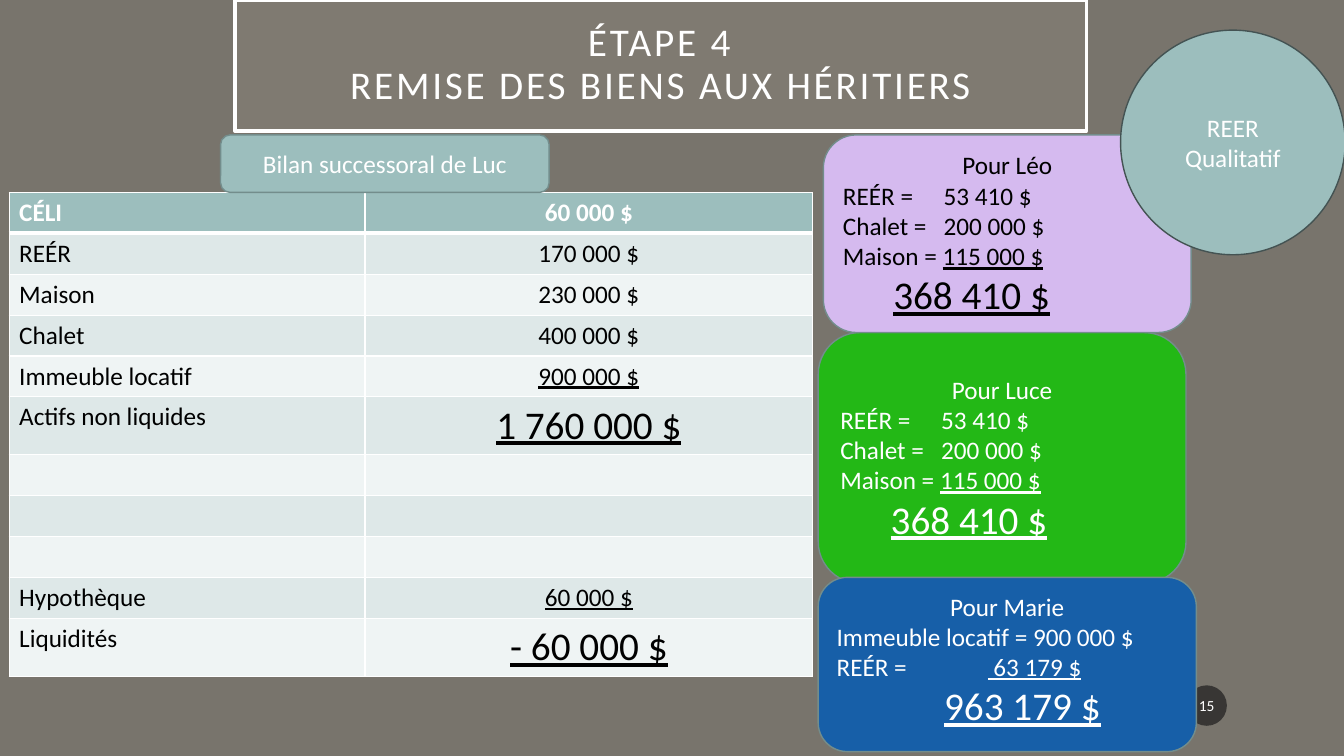
from dataclasses import dataclass

from lxml import etree
from pptx import Presentation
from pptx.dml.color import RGBColor
from pptx.enum.shapes import MSO_SHAPE
from pptx.enum.text import MSO_ANCHOR, PP_ALIGN
from pptx.oxml.ns import qn
from pptx.util import Cm, Pt

RECTANGLE, ROUNDED, OVAL = MSO_SHAPE.RECTANGLE, MSO_SHAPE.ROUNDED_RECTANGLE, MSO_SHAPE.OVAL
TOP, MIDDLE = MSO_ANCHOR.TOP, MSO_ANCHOR.MIDDLE
LEFT, CENTER = PP_ALIGN.LEFT, PP_ALIGN.CENTER


@dataclass(frozen=True)
class Theme:
    font: str = "Calibri"
    background: str = "78746C"
    white: str = "FFFFFF"
    black: str = "000000"
    title_fill: str = "A7A08E"
    number_fill: str = "1D1D1D"
    teal: str = "9CBEBD"
    teal_border: str = "738D8C"
    dark_border: str = "445353"
    bands: tuple = ("EFF4F4", "DEE8E8")
    lilac: str = "D5BAEF"
    green: str = "23B816"
    blue: str = "175FA8"
    body: int = 18
    large: int = 28
    small: int = 11


THEME = Theme()

# Content: positions and sizes in centimetres
TITLE = "ÉTAPE 4\vREMISE DES BIENS AUX HÉRITIERS"
PAGE_NUMBER = "15"
TABLE_HEADING = "Bilan successoral de Luc"
BADGE = "REER\nQualitatif"

# label, amount, underlined, total
BALANCE_SHEET = [
    ("CÉLI", "60 000 $", False, False),
    ("REÉR", "170 000 $", False, False),
    ("Maison", "230 000 $", False, False),
    ("Chalet", "400 000 $", False, False),
    ("Immeuble locatif", "900 000 $", True, False),
    ("Actifs non liquides", "1 760 000 $", True, True),
    ("", "", False, False),
    ("", "", False, False),
    ("", "", False, False),
    ("Hypothèque", "60 000 $", True, False),
    ("Liquidités", "- 60 000 $", True, True),
]
TABLE_LEFT, TABLE_TOP = 0.23, 4.85
COLUMN_WIDTHS = (8.97, 11.28)
ROW_HEIGHT, TOTAL_ROW_HEIGHT = 1.03, 1.46

# plain text, underlined amount, amount size, tab stop
CHILD_SHARE = [
    ("REÉR = \t53 410 $", "", THEME.body, 2.54),
    ("Chalet = \t200 000 $", "", THEME.body, 2.54),
    ("Maison = ", "115 000 $", THEME.body, None),
    ("\t", "368 410 $", THEME.large, 1.27),
]
MARIE_SHARE = [
    ("Immeuble locatif = 900 000 $", "", THEME.body, None),
    ("REÉR = \t", " 63 179 $", THEME.body, 3.81),
    ("\t", "963 179 $", THEME.large, 2.71),
]
# heading, share, box, fill, text colour, anchor
HEIRS = [
    ("Pour Luce", CHILD_SHARE, (20.62, 8.38, 9.27, 6.32), THEME.green, THEME.white, MIDDLE),
    ("Pour Marie", MARIE_SHARE, (20.62, 14.55, 9.53, 4.39), THEME.blue, THEME.white, TOP),
    ("Pour Léo", CHILD_SHARE, (20.75, 3.4, 9.27, 4.98), THEME.lilac, THEME.black, MIDDLE),
]


def rgb(value):
    return RGBColor.from_string(value)


def format_run(run, color, size=THEME.body, bold=False, underline=False):
    font = run.font
    font.name, font.size, font.bold, font.underline = THEME.font, Pt(size), bold, underline
    font.color.rgb = rgb(color)


def add_box(slide, kind, box, fill, line=None, line_width=1, opacity=None):
    shape = slide.shapes.add_shape(kind, *map(Cm, box))
    shape.shadow.inherit = False
    shape.fill.solid()
    shape.fill.fore_color.rgb = rgb(fill)
    if opacity is not None:
        color = shape.fill._xPr.find(".//" + qn("a:srgbClr"))
        etree.SubElement(color, qn("a:alpha"), val=str(opacity * 1000))
    if line:
        shape.line.color.rgb = rgb(line)
        shape.line.width = Pt(line_width)
    else:
        shape.line.fill.background()
    shape.text_frame.word_wrap = True
    shape.text_frame.vertical_anchor = MIDDLE
    return shape


def write_centered(shape, text, size=THEME.body, color=THEME.white):
    shape.text_frame.text = text
    for paragraph in shape.text_frame.paragraphs:
        paragraph.alignment = CENTER
        for run in paragraph.runs:
            format_run(run, color, size)


def set_tab_stop(paragraph, position):
    tabs = etree.SubElement(paragraph._p.get_or_add_pPr(), qn("a:tabLst"))
    etree.SubElement(tabs, qn("a:tab"), pos=str(Cm(position)), algn="l")


def add_title(slide):
    shape = add_box(slide, RECTANGLE, (5.92, 0, 21.46, 3.3), THEME.title_fill,
                    THEME.white, 2.5, opacity=15)
    frame = shape.text_frame
    frame.margin_left = frame.margin_right = frame.margin_top = frame.margin_bottom = Cm(0.5)
    write_centered(shape, TITLE, THEME.large)
    frame.paragraphs[0].line_spacing = 0.9
    for run in frame.paragraphs[0].runs:
        run.font._element.set("spc", "200")


def add_page_number(slide):
    shape = add_box(slide, OVAL, (29.9, 17.27, 1.02, 1.02), THEME.number_fill, opacity=70)
    shape.text_frame.margin_left = shape.text_frame.margin_right = Cm(0.05)
    write_centered(shape, PAGE_NUMBER, THEME.small)


def set_borders(cell, top, bottom):
    properties = cell._tc.get_or_add_tcPr()
    widths = (("a:lnL", 1), ("a:lnR", 1), ("a:lnT", top), ("a:lnB", bottom))
    for index, (side, width) in enumerate(widths):
        line = etree.Element(qn(side), w=str(Pt(width)))
        fill = etree.SubElement(line, qn("a:solidFill"))
        etree.SubElement(fill, qn("a:srgbClr"), val=THEME.white)
        properties.insert(index, line)


def add_balance_sheet(slide):
    heights = [TOTAL_ROW_HEIGHT if row[3] else ROW_HEIGHT for row in BALANCE_SHEET]
    table = slide.shapes.add_table(
        len(BALANCE_SHEET), len(COLUMN_WIDTHS), Cm(TABLE_LEFT), Cm(TABLE_TOP),
        Cm(sum(COLUMN_WIDTHS)), Cm(sum(heights))).table
    table.horz_banding = False
    for column, width in zip(table.columns, COLUMN_WIDTHS):
        column.width = Cm(width)
    for index, (label, amount, underlined, total) in enumerate(BALANCE_SHEET):
        header = index == 0
        table.rows[index].height = Cm(heights[index])
        amount_size = THEME.large if total else THEME.body
        cells = ((label, LEFT, THEME.body, False), (amount, CENTER, amount_size, underlined))
        for column, (text, alignment, size, underline) in enumerate(cells):
            cell = table.cell(index, column)
            cell.fill.solid()
            cell.fill.fore_color.rgb = rgb(THEME.teal if header else THEME.bands[index % 2])
            set_borders(cell, 3 if index == 1 else 1, 3 if header else 1)
            paragraph = cell.text_frame.paragraphs[0]
            paragraph.text = text
            paragraph.alignment = alignment
            for run in paragraph.runs:
                format_run(run, THEME.white if header else THEME.black, size, header, underline)


def add_heir(slide, heading, share, box, fill, color, anchor):
    shape = add_box(slide, ROUNDED, box, fill, THEME.teal_border)
    shape.text_frame.vertical_anchor = anchor
    write_centered(shape, heading, color=color)
    for plain, amount, size, tab_stop in share:
        paragraph = shape.text_frame.add_paragraph()
        paragraph.alignment = LEFT
        if tab_stop:
            set_tab_stop(paragraph, tab_stop)
        paragraph.text = plain
        format_run(paragraph.runs[0], color)
        if amount:
            run = paragraph.add_run()
            run.text = amount
            format_run(run, color, size, underline=True)


def main():
    presentation = Presentation()
    presentation.slide_width, presentation.slide_height = Cm(33.87), Cm(19.05)
    slide = presentation.slides.add_slide(presentation.slide_layouts[6])
    slide.background.fill.solid()
    slide.background.fill.fore_color.rgb = rgb(THEME.background)
    add_title(slide)
    add_page_number(slide)
    add_balance_sheet(slide)
    heading = add_box(slide, ROUNDED, (5.56, 3.4, 8.28, 1.45), THEME.teal, THEME.teal_border)
    write_centered(heading, TABLE_HEADING)
    for heir in HEIRS:
        add_heir(slide, *heir)
    badge = add_box(slide, OVAL, (28.24, 0.76, 5.66, 5.66), THEME.teal, THEME.dark_border)
    write_centered(badge, BADGE)
    presentation.save("out.pptx")


if __name__ == "__main__":
    main()
